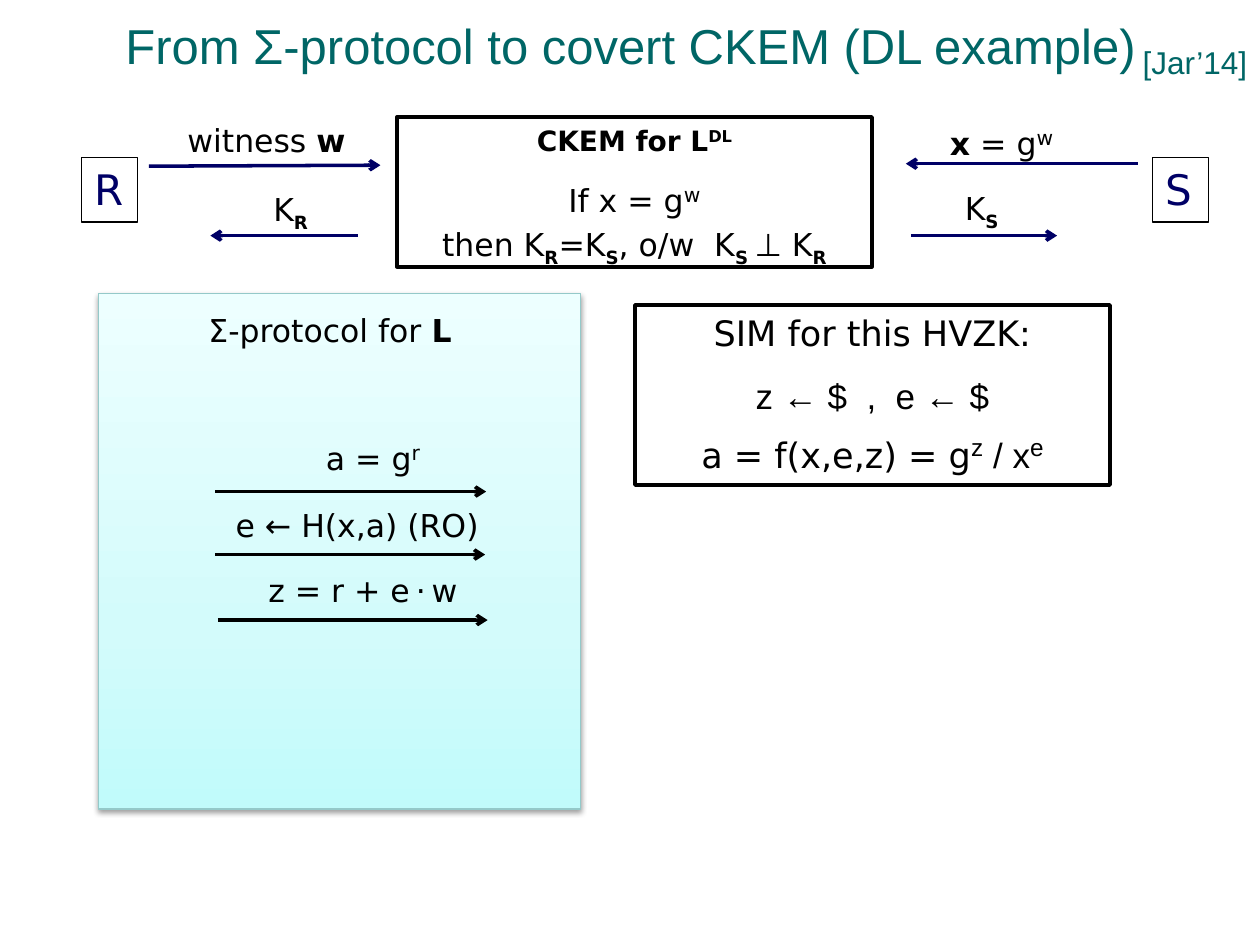
from lxml import etree
from pptx import Presentation
from pptx.dml.color import RGBColor
from pptx.enum.shapes import MSO_CONNECTOR, MSO_SHAPE
from pptx.enum.text import MSO_ANCHOR, MSO_AUTO_SIZE, PP_ALIGN
from pptx.oxml.ns import qn
from pptx.util import Cm, Pt

RECT, LINE = MSO_SHAPE.RECTANGLE, MSO_CONNECTOR.STRAIGHT
LEFT, MID, TOP = PP_ALIGN.LEFT, PP_ALIGN.CENTER, MSO_ANCHOR.TOP
FIT = MSO_AUTO_SIZE.SHAPE_TO_FIT_TEXT
SANS, ARIAL = "DejaVu Sans", "Arial"
NAVY, TEAL, BLACK, WHITE = "000066", "006666", "000000", "FFFFFF"

# Run styles
BOLD = {"bold": True}
SUB = {"bold": True, "base": -25}


def sup(size, **more):
    return {"size": size, "base": 30, **more}


# A paragraph is (size, space after, runs); a run is text or (text, style)
TITLE = [(28, 0, ["From Σ-protocol to covert CKEM (DL example)"])]
TAG = [(18, 0, ["[Jar’14]"])]
CKEM = [
    (16, 12, [("CKEM for L", BOLD), ("DL", sup(16, bold=True))]),
    (18, 3, ["If x = g", ("w", sup(20))]),
    (18, 3, ["then K", ("R", SUB), "=K", ("S", SUB), ", o/w  K",
             ("S ", SUB), "⊥ K", ("R", SUB)]),
]
SIM = [
    (20, 12, ["SIM for this HVZK:"]),
    (20, 6, [("z ← $  ,  e ← $", {"face": ARIAL})]),
    (20, 6, ["a = f(x,e,z) = g", ("z", sup(24, face=ARIAL)),
             (" / x", {"face": ARIAL}), ("e", sup(24, face=ARIAL))]),
]
THIN = (" ", {"size": 10.5})

# Labels: left, top, width, height, wrap, align, paragraphs
LABELS = [
    (5.26, 3.71, 1.3, 1.02, False, LEFT, [(18, 0, ["K", ("R", SUB)])]),
    (19.2, 3.68, 1.24, 1.02, False, LEFT, [(18, 0, ["K", ("S", SUB)])]),
    (3.53, 2.31, 3.78, 1.02, False, LEFT, [(18, 0, ["witness ", ("w", BOLD)])]),
    (18.9, 2.31, 2.64, 1.3, False, LEFT,
     [(18, 0, [("x", BOLD), " = g", ("w", sup(20))])]),
    (6.32, 8.66, 3.18, 1.12, True, LEFT, [(18, 0, ["a = g", ("r", sup(20))])]),
    (4.5, 10.08, 5.79, 1.02, False, LEFT, [(18, 0, ["e ← H(x,a) (RO)"])]),
    (5.16, 11.38, 4.65, 1.02, True, LEFT,
     [(18, 0, ["z = r + e", THIN, "⋅", THIN, "w"])]),
    (3.86, 6.15, 5.59, 1.02, False, MID,
     [(18, 12, ["Σ-protocol for ", ("L", BOLD)])]),
]

# Arrows: start x, start y, end x, end y, colour
ARROWS = [
    (7.21, 4.75, 4.24, 4.75, NAVY),
    (18.36, 4.75, 21.31, 4.75, NAVY),
    (3, 3.35, 7.67, 3.33, NAVY),
    (22.94, 3.3, 18.26, 3.3, NAVY),
    (4.34, 9.91, 9.8, 9.91, BLACK),
    (4.34, 11.18, 9.78, 11.18, BLACK),
    (4.39, 12.5, 9.83, 12.5, BLACK),
]
PARTIES = [("R", 1.65), ("S", 23.24)]
STOPS = [(0, "C1FBFB"), (35, "D3FBFB"), (100, "EDFFFF")]

deck = Presentation()
deck.slide_width, deck.slide_height = Cm(25.4), Cm(19.05)
slide = deck.slides.add_slide(deck.slide_layouts[6])
shapes = slide.shapes


def rgb(code):
    return RGBColor.from_string(code)


def node(parent, tag, **attrs):
    return etree.SubElement(parent, qn("a:" + tag), attrs)


def write(shape, paras, align=LEFT, wrap=True, face=SANS, color=BLACK):
    frame = shape.text_frame
    frame.word_wrap, frame.auto_size = wrap, FIT
    frame.vertical_anchor = TOP
    for i, (size, after, runs) in enumerate(paras):
        para = frame.add_paragraph() if i else frame.paragraphs[0]
        para.alignment, para.space_after = align, Pt(after)
        para.font.size, para.font.name = Pt(size), face
        para.font.color.rgb = rgb(color)
        for item in runs:
            text, style = (item, {}) if isinstance(item, str) else item
            run = para.add_run()
            run.text = text
            if "size" in style:
                run.font.size = Pt(style["size"])
            if "face" in style:
                run.font.name = style["face"]
            if "bold" in style:
                run.font.bold = True
            if "base" in style:
                run.font._element.set("baseline", str(style["base"] * 1000))


def label(left, top, width, height, wrap, align, paras, **look):
    box = shapes.add_textbox(Cm(left), Cm(top), Cm(width), Cm(height))
    write(box, paras, align, wrap, **look)


def rect(left, top, width, height, line, weight, fill=None):
    shape = shapes.add_shape(RECT, Cm(left), Cm(top), Cm(width), Cm(height))
    shape.shadow.inherit = False
    shape.line.color.rgb, shape.line.width = rgb(line), Pt(weight)
    if fill:
        shape.fill.solid()
        shape.fill.fore_color.rgb = rgb(fill)
    else:
        shape.fill.background()
    return shape


def arrow(x1, y1, x2, y2, color):
    line = shapes.add_connector(LINE, Cm(x1), Cm(y1), Cm(x2), Cm(y2))
    line.line.color.rgb, line.line.width = rgb(color), Pt(2)
    node(line.line._get_or_add_ln(), "tailEnd", type="arrow")
    node(line._element.spPr, "effectLst")


# Protocol panel: gradient and soft shadow
panel = rect(1.98, 5.92, 9.73, 10.39, "94C9C9", 0.75)
panel.fill.gradient()
panel.fill.gradient_angle = 90
props = panel._element.spPr
stops = props.find(".//" + qn("a:gsLst"))
for old in list(stops):
    stops.remove(old)
for place, code in STOPS:
    node(node(stops, "gs", pos=str(place * 1000)), "srgbClr", val=code)
shade = node(props.find(qn("a:effectLst")), "outerShdw", blurRad=str(Pt(3.1)),
             dist=str(Pt(1.6)), dir="5400000", rotWithShape="0")
node(node(shade, "srgbClr", val=BLACK), "alpha", val="38000")

# Title and citation
label(0.43, 0.18, 24.56, 2.54, True, MID, TITLE, face=ARIAL, color=TEAL)
label(22.5, 0.74, 3.18, 0.94, True, MID, TAG, face=ARIAL, color=TEAL)

# Parties
for name, left in PARTIES:
    write(rect(left, 3.18, 1.12, 1.3, BLACK, 0.75), [(24, 0, [name])],
          wrap=False, color=NAVY)

# Framed boxes
write(rect(8, 2.36, 9.58, 3.02, BLACK, 2, WHITE), CKEM, MID)
write(rect(12.8, 6.15, 9.58, 3.63, BLACK, 2, WHITE), SIM, MID)

# Messages
for item in ARROWS:
    arrow(*item)
for item in LABELS:
    label(*item)

deck.save("out.pptx")
